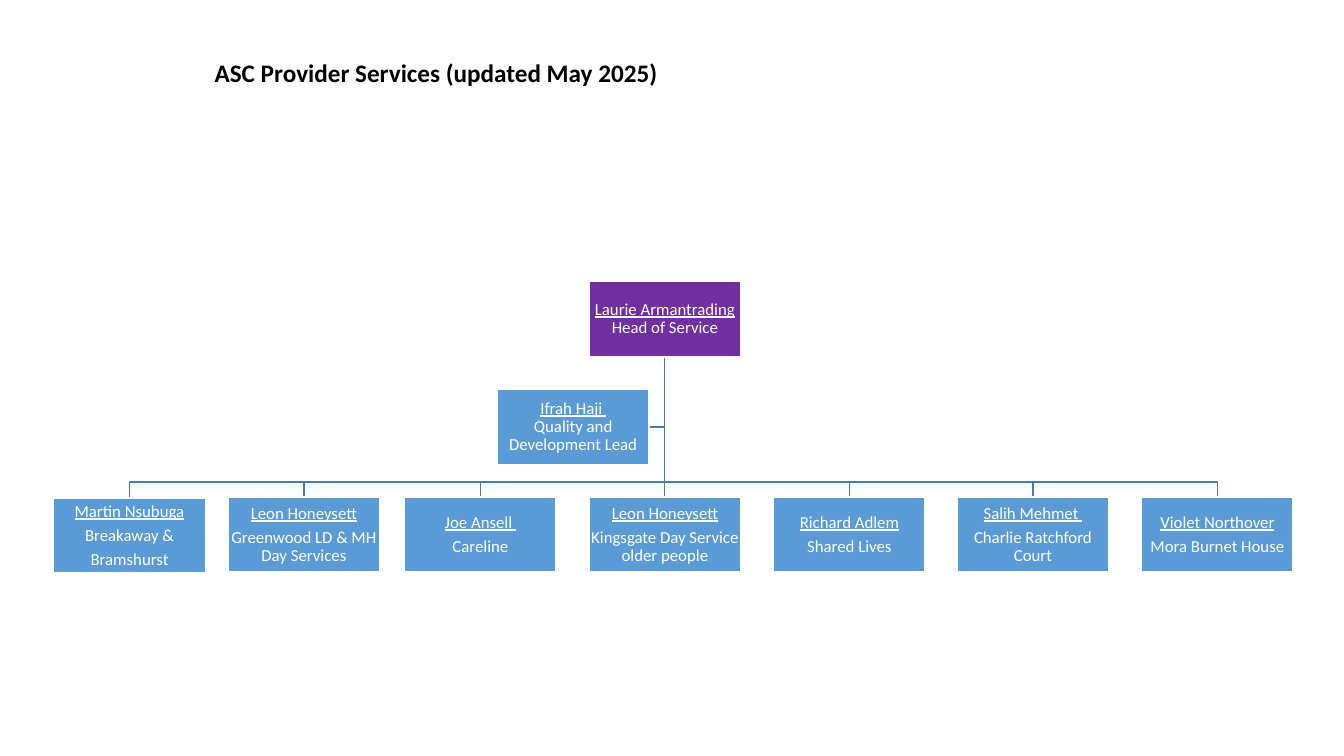
from dataclasses import dataclass

from lxml.etree import SubElement
from pptx import Presentation
from pptx.dml.color import RGBColor as RGB
from pptx.enum.shapes import MSO_CONNECTOR as Conn, MSO_SHAPE as Shape
from pptx.enum.text import MSO_ANCHOR as Anchor, PP_ALIGN as Align
from pptx.oxml.ns import qn
from pptx.util import Inches, Pt


@dataclass(frozen=True)
class Theme:
    font: str = "Calibri"
    black: RGB = RGB(0, 0, 0)
    white: RGB = RGB(255, 255, 255)
    blue: RGB = RGB(0x5B, 0x9B, 0xD5)
    purple: RGB = RGB(0x70, 0x30, 0xA0)
    line: RGB = RGB(0x49, 0x7C, 0xAB)
    title: int = 18
    body: int = 12


THEME = Theme()
WIDTH, HEIGHT = 1.51, 0.75
STEM, BAR = 6.59, 4.78
HEAD_TOP, LEAD_TOP, TEAM_TOP = 2.79, 3.86, 4.93
HEAD_LEFT, LEAD_LEFT = 5.84, 4.93
HEAD_END = 3.55

# left, top, lines of text
TEAMS = [
    (0.53, 4.94, ["Martin Nsubuga", "Breakaway &", "Bramshurst"]),
    (2.26, TEAM_TOP, ["Leon Honeysett", "Greenwood LD & MH Day Services"]),
    (4.01, TEAM_TOP, ["Joe Ansell ", "Careline"]),
    (HEAD_LEFT, TEAM_TOP,
     ["Leon Honeysett", "Kingsgate Day Service older people"]),
    (7.67, TEAM_TOP, ["Richard Adlem", "Shared Lives"]),
    (9.49, TEAM_TOP, ["Salih Mehmet ", "Charlie Ratchford Court"]),
    (11.32, TEAM_TOP, ["Violet Northover", "Mora Burnet House"]),
]


def style(font, size, color):
    font.name = THEME.font
    font.size = Pt(size)
    font.color.rgb = color


def add_title(slide, text):
    box = slide.shapes.add_textbox(
        Inches(2.03), Inches(0.52), Inches(5.07), Inches(0.4))
    frame = box.text_frame
    frame.word_wrap = True
    frame.text = text
    font = frame.paragraphs[0].runs[0].font
    style(font, THEME.title, THEME.black)
    font.bold = True


def add_box(slide, left, top, lines, fill=THEME.blue, gap=4.2):
    """Draw a staff box; the first line is the underlined name."""
    box = slide.shapes.add_shape(
        Shape.RECTANGLE, Inches(left), Inches(top),
        Inches(WIDTH), Inches(HEIGHT))
    box.shadow.inherit = False
    box.fill.solid()
    box.fill.fore_color.rgb = fill
    box.line.color.rgb = THEME.white
    box.line.width = Pt(1.5)
    frame = box.text_frame
    frame.word_wrap = True
    frame.vertical_anchor = Anchor.MIDDLE
    frame.margin_left = frame.margin_right = Inches(0.01)
    frame.margin_top = frame.margin_bottom = Inches(0.01)
    frame.text = "\n".join(lines)
    for i, para in enumerate(frame.paragraphs):
        para.alignment = Align.CENTER
        para.line_spacing = 0.9
        para.space_after = Pt(gap)
        font = para.runs[0].font
        style(font, THEME.body, THEME.white)
        font.underline = i == 0


def add_link(slide, points):
    """Draw a thin line through the points, bent where there are over two."""
    spots = [(Inches(x), Inches(y)) for x, y in points]
    if len(spots) == 2:
        link = slide.shapes.add_connector(Conn.STRAIGHT, *spots[0], *spots[1])
        SubElement(link._element.spPr, qn("a:effectLst"))
    else:
        form = slide.shapes.build_freeform(*spots[0])
        form.add_line_segments(spots[1:], close=False)
        link = form.convert_to_shape()
        link.shadow.inherit = False
        link.fill.background()
    link.line.color.rgb = THEME.line
    link.line.width = Pt(1)


def add_links(slide):
    start = (STEM, HEAD_END)
    side = LEAD_TOP + HEIGHT / 2
    add_link(slide, [start, (STEM, side), (LEAD_LEFT + WIDTH, side)])
    for left, top, _ in reversed(TEAMS):
        if left == HEAD_LEFT:
            add_link(slide, [start, (STEM, top)])
        else:
            mid = left + WIDTH / 2
            add_link(slide, [start, (STEM, BAR), (mid, BAR), (mid, top)])


def main():
    deck = Presentation()
    deck.slide_width, deck.slide_height = Inches(13.33), Inches(7.5)
    slide = deck.slides.add_slide(deck.slide_layouts[6])
    add_title(slide, "ASC Provider Services (updated May 2025)")
    add_links(slide)
    add_box(slide, HEAD_LEFT, HEAD_TOP,
            ["Laurie Armantrading", "Head of Service"], THEME.purple, gap=0)
    for left, top, lines in TEAMS:
        add_box(slide, left, top, lines)
    add_box(slide, LEAD_LEFT, LEAD_TOP,
            ["Ifrah Haji ", "Quality and Development Lead"], gap=0)
    deck.save("out.pptx")


if __name__ == "__main__":
    main()
